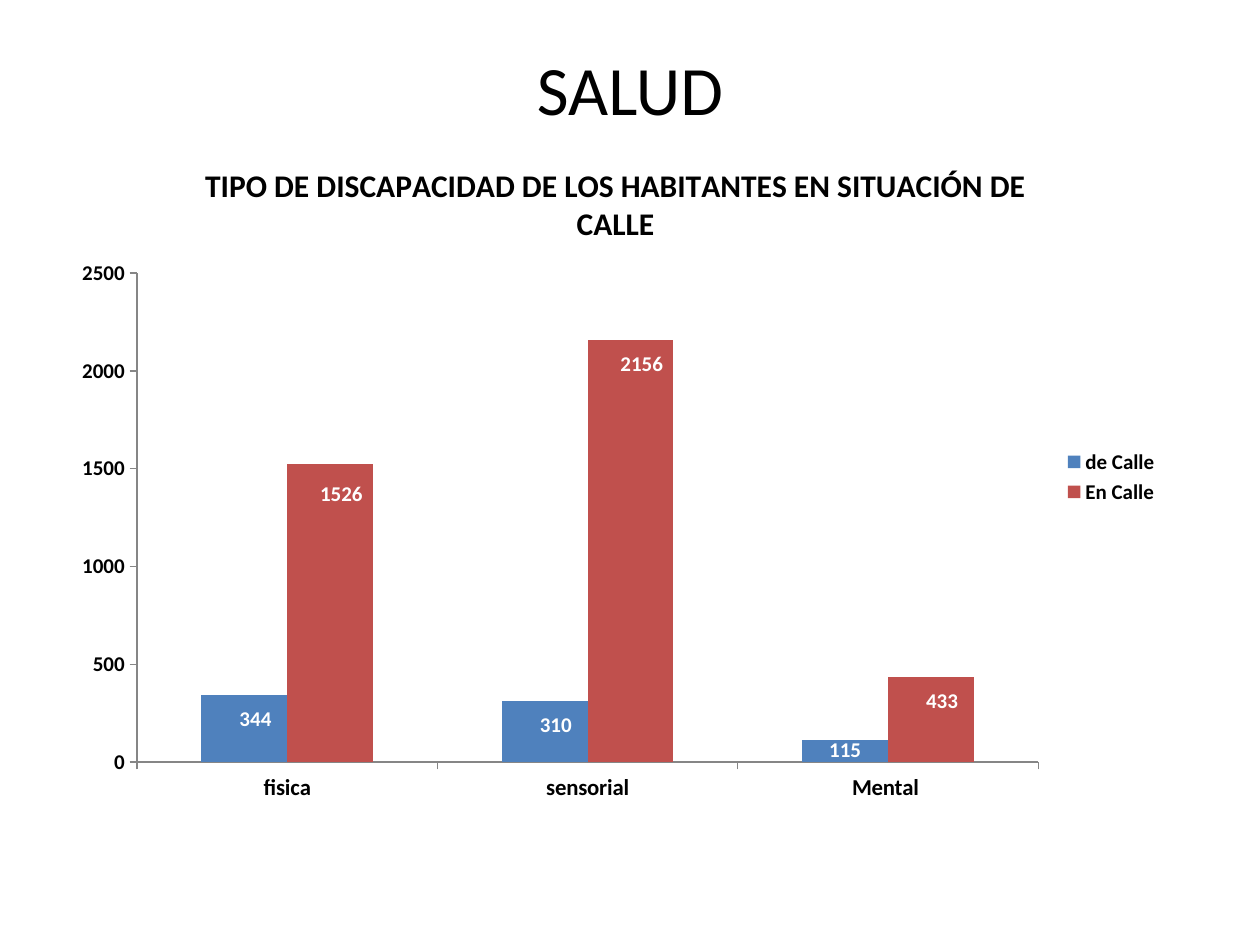
from lxml import etree
from pptx import Presentation
from pptx.chart.data import CategoryChartData
from pptx.dml.color import RGBColor
from pptx.enum import chart as kinds, text
from pptx.oxml import ns
from pptx.util import Inches, Pt

FONT = "Calibri"
CATEGORIES = ["fisica", "sensorial", "Mental "]
# name, colour, values, label shifts as fractions of the chart size
SERIES = [
    ("de Calle", "4F81BD", (344, 310, 115), ((0.01, 0.01), (0.01, 0.01), (0, -0.01))),
    ("En Calle", "C0504D", (1526, 2156, 433), ((0.01, 0.02), (0.01, 0.01), (0.01, 0.01))),
]


def rgb(value):
    return RGBColor.from_string(value)


def style(font, size, color="000000", bold=True):
    font.name = FONT
    font.size = Pt(size)
    font.bold = bold
    font.color.rgb = rgb(color)


def manual_layout(**values):
    """Return a chart layout element holding the given settings in order."""
    layout = etree.Element(ns.qn("c:layout"))
    manual = etree.SubElement(layout, ns.qn("c:manualLayout"))
    for name, value in values.items():
        etree.SubElement(manual, ns.qn("c:" + name)).set("val", str(value))
    return layout


def add_title(page, left, top, width, height):
    title = page.shapes.title
    title.left, title.top, title.width, title.height = left, top, width, height
    title.text_frame.vertical_anchor = text.MSO_ANCHOR.MIDDLE
    para = title.text_frame.paragraphs[0]
    para.alignment = text.PP_ALIGN.CENTER
    span = para.add_run()
    span.text = "SALUD"
    style(span.font, 39.6, bold=False)


def style_axis(axis, size):
    axis.has_major_gridlines = False
    axis.major_tick_mark = kinds.XL_TICK_MARK.OUTSIDE
    axis.minor_tick_mark = kinds.XL_TICK_MARK.NONE
    axis.format.line.color.rgb = rgb("868686")
    style(axis.tick_labels.font, size)


def style_series(series, color, shifts):
    series.format.fill.solid()
    series.format.fill.fore_color.rgb = rgb(color)
    series.invert_if_negative = False
    labels = series.data_labels
    labels.show_value = True
    style(labels.font, 12, "FFFFFF")
    for index in range(len(shifts)):
        label = series.points[index].data_label
        style(label.font, 12, "FFFFFF")
        label.position = kinds.XL_LABEL_POSITION.INSIDE_END
    for element, (across, down) in zip(series._element.iter(ns.qn("c:dLbl")), shifts):
        element.insert(1, manual_layout(x=across, y=down))
    for leader in series._element.iter(ns.qn("c:showLeaderLines")):
        leader.set("val", "0")


def add_disability_chart(page, left, top, width, height):
    data = CategoryChartData()
    data.categories = CATEGORIES
    for name, _, values, _ in SERIES:
        data.add_series(name, values)
    chart = page.shapes.add_chart(
        kinds.XL_CHART_TYPE.COLUMN_CLUSTERED, left, top, width, height, data).chart
    style(chart.font, 12)

    chart.has_title = True
    span = chart.chart_title.text_frame.paragraphs[0].add_run()
    span.text = "TIPO DE DISCAPACIDAD DE LOS HABITANTES EN SITUACIÓN DE CALLE"
    style(span.font, 18)
    chart.chart_title.include_in_layout = False

    chart.has_legend = True
    chart.legend.position = kinds.XL_LEGEND_POSITION.RIGHT
    chart.legend.include_in_layout = False
    style(chart.legend.font, 12)

    style_axis(chart.category_axis, 13)
    style_axis(chart.value_axis, 12)
    chart.value_axis.minimum_scale = 0
    chart.value_axis.maximum_scale = 2500
    chart.value_axis.major_unit = 500

    plot = chart.plots[0]
    plot.vary_by_categories = False
    plot.gap_width = 150
    plot.overlap = 0
    for series, (_, color, _, shifts) in zip(plot.series, SERIES):
        style_series(series, color, shifts)

    area = chart._chartSpace.chart.plotArea
    for old in area.findall(ns.qn("c:layout")):
        area.remove(old)
    area.insert(0, manual_layout(layoutTarget="inner", xMode="edge", yMode="edge",
                                 x=0.07, y=0.2, w=0.81, h=0.72))


def main():
    deck = Presentation()
    deck.slide_width, deck.slide_height = Inches(10), Inches(7.5)
    page = deck.slides.add_slide(deck.slide_layouts[5])
    add_disability_chart(page, Inches(0.47), Inches(1.09), Inches(8.83), Inches(5.39))
    add_title(page, Inches(0.5), Inches(0.3), Inches(9), Inches(0.79))
    deck.save("out.pptx")


if __name__ == "__main__":
    main()
